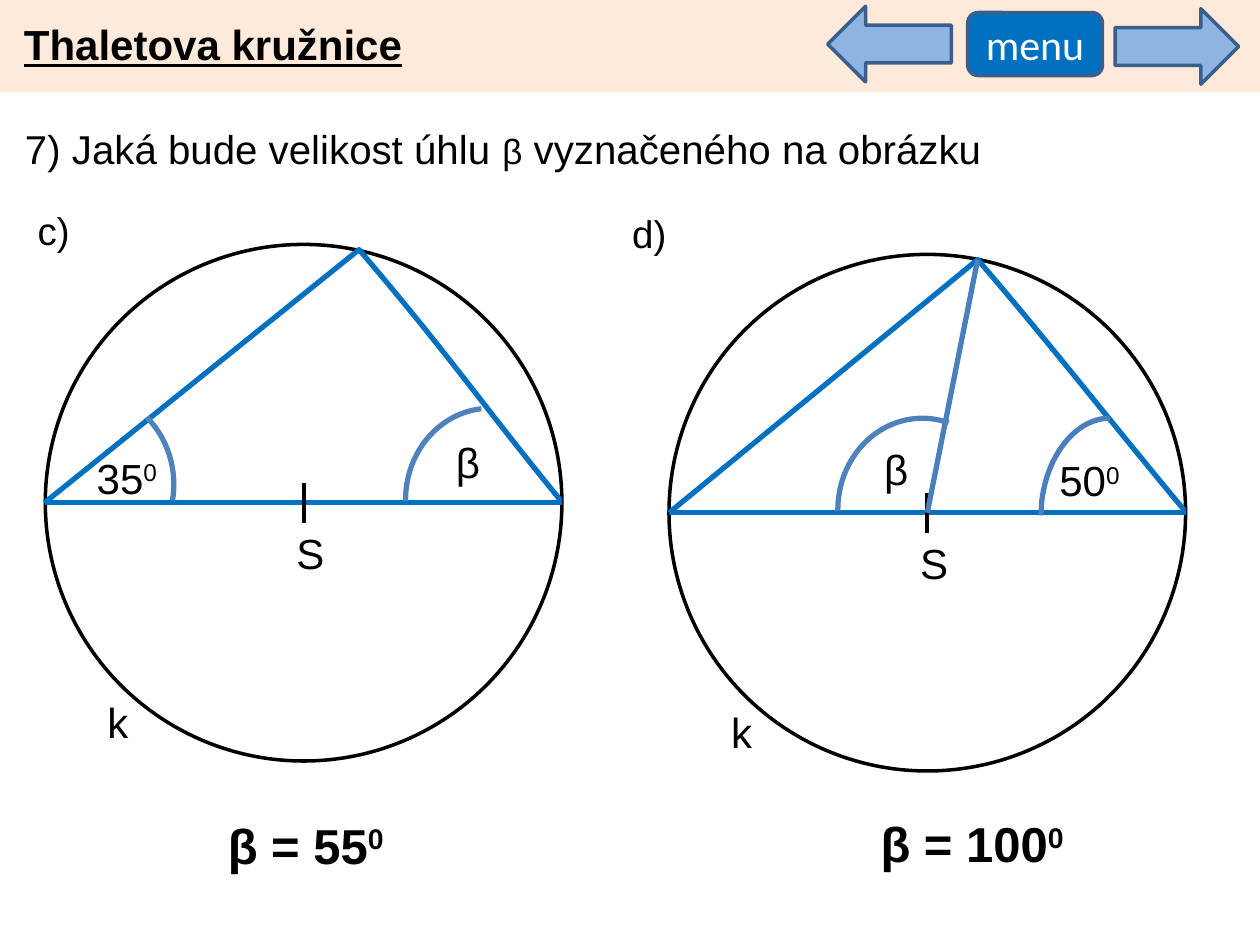
from pptx import Presentation
from pptx.dml.color import RGBColor as Rgb
from pptx.enum.shapes import MSO_CONNECTOR as Con, MSO_SHAPE as Geo
from pptx.enum.text import MSO_ANCHOR as Anchor, MSO_AUTO_SIZE as Fit, PP_ALIGN as Align
from pptx.oxml.ns import qn
from pptx.util import Pt
from lxml.etree import SubElement

theme = {
    "ink": Rgb.from_string("000000"),
    "white": Rgb.from_string("FFFFFF"),
    "band": Rgb.from_string("FDEADA"),
    "blue": Rgb.from_string("0070C0"),
    "arrow": Rgb.from_string("8EB4E3"),
    "edge": Rgb.from_string("3A5F8C"),
    "steel": Rgb.from_string("4B7EBC"),
    "arc": Rgb.from_string("4F81BD"),
    "label": Pt(24),
    "part": Pt(22),
    "task": Pt(23),
    "beta": Pt(20),
    "result": Pt(28),
}


def paint(item, color, width, fill=None):
    if fill:
        item.fill.solid()
        item.fill.fore_color.rgb = theme[fill]
    elif hasattr(item, "fill"):
        item.fill.background()
    if color:
        item.line.color.rgb = theme[color]
        item.line.width = Pt(width)
    else:
        item.line.fill.background()
    if hasattr(item, "shadow"):
        item.shadow.inherit = False
    else:
        SubElement(item._element.spPr, qn("a:effectLst"))


def write(item, runs, size="label", color="ink", name="Arial", **style):
    frame = item.text_frame
    frame.word_wrap = True
    line = frame.paragraphs[0]
    for text, extra in runs:
        run = line.add_run()
        run.text = text
        look = {"name": name, "size": theme[size], **style}
        if extra == "sup":
            run._r.get_or_add_rPr().set("baseline", "30000")
        elif extra:
            look["size"] = theme[extra]
        for key, value in look.items():
            setattr(run.font, key, value)
        run.font.color.rgb = theme[color]
    return line


deck = Presentation()
deck.slide_width, deck.slide_height = Pt(720), Pt(540)
slide = deck.slides.add_slide(deck.slide_layouts[5])
shapes = slide.shapes

band = shapes.add_shape(Geo.RECTANGLE, 0, 0, Pt(720), Pt(52.5))
paint(band, None, 0, "band")

for kind, x, y in [(Geo.RIGHT_ARROW, 637.2, 5), (Geo.LEFT_ARROW, 473, 3.6)]:
    arrow = shapes.add_shape(kind, Pt(x), Pt(y), Pt(70.6), Pt(43.2))
    paint(arrow, "edge", 2, "arrow")

title = shapes.title
place = {"left": Pt(6.5), "top": Pt(7.2), "width": Pt(671), "height": Pt(36)}
for key, value in place.items():
    setattr(title, key, value)
line = write(title, [("Thaletova kružnice", None)], bold=True, underline=True)
line.alignment = Align.LEFT
title.text_frame.vertical_anchor = Anchor.TOP
title.text_frame.auto_size = Fit.NONE
shapes._spTree.append(title._element)

menu = shapes.add_shape(Geo.ROUNDED_RECTANGLE, Pt(553), Pt(7.2), Pt(77), Pt(36))
paint(menu, "edge", 2, "blue")
line = write(menu, [("menu", None)], color="white", name="Calibri")
line.alignment = Align.CENTER
menu.text_frame.vertical_anchor = Anchor.MIDDLE

side = 295.2
left, top = 25.9, 139.7
mid = side / 2
panels = [(left, top), (left + 356.4, top + 5.7)]
for x, y in panels:
    ring = shapes.add_shape(Geo.OVAL, Pt(x), Pt(y), Pt(side), Pt(side))
    paint(ring, "ink", 2)
    for ends, color, width in [
        ((0, mid, side, mid), "blue", 3),
        ((mid, mid - 11.3, mid, mid + 11.3), "ink", 2.25),
    ]:
        x1, y1, x2, y2 = ends
        rule = shapes.add_connector(
            Con.STRAIGHT, Pt(x + x1), Pt(y + y1), Pt(x + x2), Pt(y + y2))
        paint(rule, color, width)

curves = [
    ([(25.4, 287.3)], [(205.2, 142.6), (258.5, 205.2), (272.2, 226.8), (320.4, 286)], "blue"),
    ([(382.3, 293)], [(558.7, 148.3), (604.8, 202.3), (627.8, 232.6), (676.8, 291.6)], "blue"),
    ([], [(594.9, 294.5), (594.9, 265), (612.7, 239), (634.3, 239)], "steel"),
]
for points, bend, color in curves:
    for step in range(25):
        t = step / 24
        parts = [(1 - t) ** 3, 3 * t * (1 - t) ** 2, 3 * t * t * (1 - t), t ** 3]
        points.append(tuple(sum(w * p[i] for w, p in zip(parts, bend)) for i in (0, 1)))
    spots = [(Pt(x), Pt(y)) for x, y in points]
    build = shapes.build_freeform(*spots[0])
    build.add_line_segments(spots[1:], close=False)
    paint(build.convert_to_shape(), color, 3)

ray = shapes.add_connector(Con.STRAIGHT, Pt(529.9), Pt(293), Pt(558.7), Pt(148.3))
paint(ray, "steel", 3)

for x, y, start, end in [
    (478.8, 239, 179, 286.9),
    (2.9, 224.6, 310.9, 10.9),
    (231.8, 233.3, 179, 264.5),
]:
    arc = shapes.add_shape(Geo.ARC, Pt(x), Pt(y), Pt(96.5), Pt(104.4))
    arc.adjustments[0], arc.adjustments[1] = start * 0.6, end * 0.6
    paint(arc, "arc", 3)

labels = [
    (7.2, 67.7, 712.8, [("7) Jaká bude velikost úhlu ", None), ("β", "beta"),
                        (" vyznačeného na obrázku", None)], "task"),
    (14.4, 114.5, 45.4, [("c)", None)], "part"),
    (354.2, 116.6, 45.4, [("d)", None)], "part"),
    (253.4, 246.2, 45.4, [("β", None)], "label"),
    (498.2, 249.8, 45.4, [("β", None)], "label"),
    (48.2, 254.9, 67.7, [("35", None), ("0", "sup")], "label"),
    (598.3, 256.3, 67.7, [("50", None), ("0", "sup")], "label"),
    (123.1, 462.2, 167.8, [("β = 55", None), ("0", "sup")], "result"),
    (496.1, 461.5, 167.8, [("β = 100", None), ("0", "sup")], "result"),
]
for x, y in panels:
    labels.append((x + 136.4, y + 158.4, 45.4, [("S", None)], "label"))
    labels.append((x + 28.4, y + 254.9, 45.4, [("k", None)], "label"))

for x, y, width, runs, size in labels:
    box = shapes.add_textbox(Pt(x), Pt(y), Pt(width), theme[size] * 1.2 + Pt(7.2))
    box.text_frame.auto_size = Fit.SHAPE_TO_FIT_TEXT
    write(box, runs, size, bold=size == "result")

deck.save("out.pptx")
